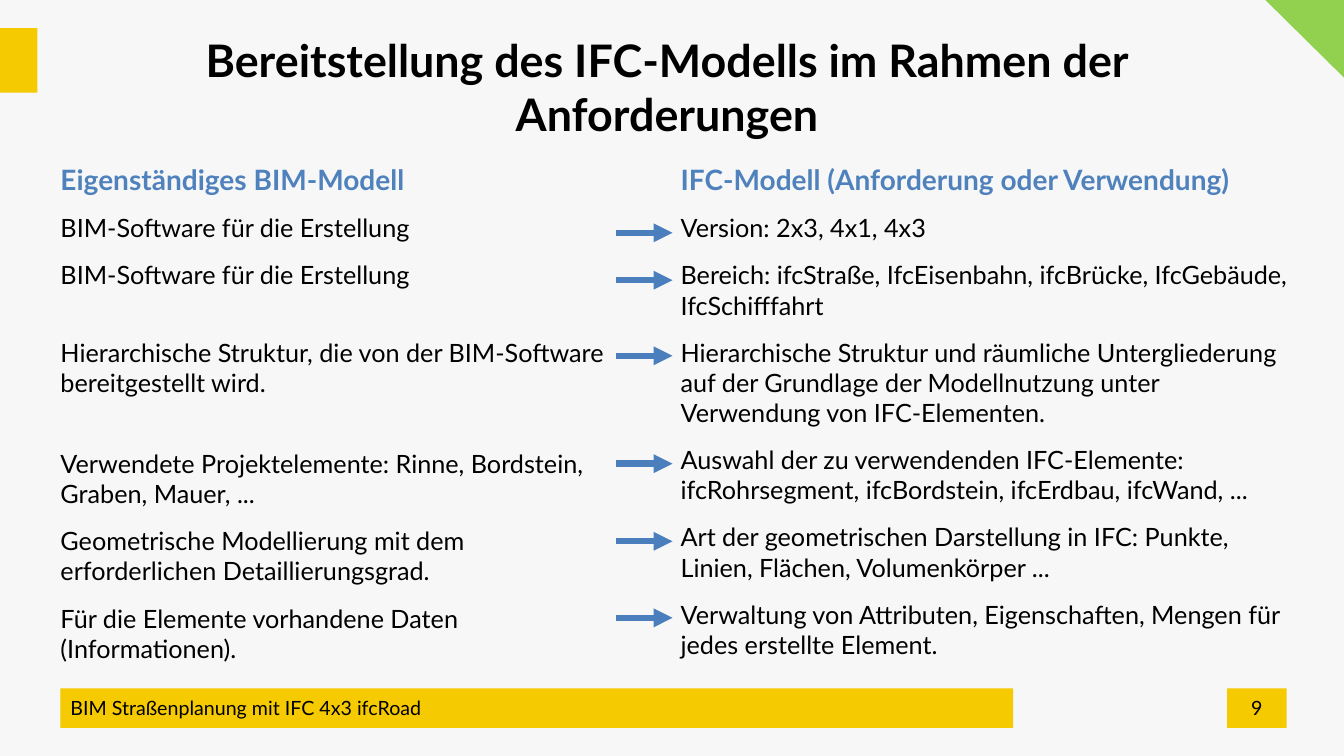
from lxml import etree
from pptx import Presentation
from pptx.dml.color import RGBColor
from pptx.enum.shapes import MSO_CONNECTOR, MSO_SHAPE
from pptx.enum.text import MSO_ANCHOR, PP_ALIGN
from pptx.oxml.ns import qn
from pptx.util import Inches, Pt

RECTANGLE, TRIANGLE = MSO_SHAPE.RECTANGLE, MSO_SHAPE.RIGHT_TRIANGLE
STRAIGHT = MSO_CONNECTOR.STRAIGHT
LEFT, CENTER = PP_ALIGN.LEFT, PP_ALIGN.CENTER
TOP, MIDDLE = MSO_ANCHOR.TOP, MSO_ANCHOR.MIDDLE

WIDTH, HEIGHT = Inches(13.33), Inches(7.5)
YELLOW, GREEN, BLUE, ARROW_BLUE = "F5CA01", "92D050", "4F81BD", "4B7EBC"
BLACK, BACKGROUND = "000000", "F7F7F7"

# Text formats
TITLE = {"size": Pt(32), "bold": True}
HEADING = {"size": Pt(20), "bold": True}
ITEM = {"size": Pt(18), "bold": False}
FOOTER = {"size": Pt(14), "bold": False}
BODY_FRAME = {"margin_left": 0, "word_wrap": True, "vertical_anchor": TOP}
FOOTER_FRAME = {"word_wrap": True, "vertical_anchor": MIDDLE}

# Places in percent of the slide: left, top, width, height
MARGIN = 4.5
TITLE_PLACE = (MARGIN, 3.73, 91, 15.73)
BIM_PLACE = (MARGIN, 20.8, 42.54, 70.13)
IFC_PLACE = (50.64, 20.8, 46.06, 70.13)
FOOTER_PLACE = (MARGIN, 91.07, 70.89, 5.2)
NUMBER_PLACE = (91.3, 91.07, 4.43, 5.2)
TAB_PLACE = (0, 3.73, 2.78, 8.53)
CORNER_PLACE = (94.15, 0, 5.85, 10.27)
ARROW_START, ARROW_END = 45.84, 50.04

# Each row: BIM text, its space before, IFC text, arrow height in percent
GAP = 12
ROWS = [
    ("BIM-Software für die Erstellung", GAP,
     "Version: 2x3, 4x1, 4x3", 30.8),
    ("BIM-Software für die Erstellung", GAP,
     "Bereich: ifcStraße, IfcEisenbahn, ifcBrücke, IfcGebäude, IfcSchifffahrt", 37.07),
    ("Hierarchische Struktur, die von der BIM-Software bereitgestellt wird.", 34,
     "Hierarchische Struktur und räumliche Untergliederung auf der Grundlage "
     "der Modellnutzung unter Verwendung von IFC-Elementen.", 47.07),
    ("Verwendete Projektelemente: Rinne, Bordstein, Graben, Mauer, ...", 36,
     "Auswahl der zu verwendenden IFC-Elemente: ifcRohrsegment, ifcBordstein, "
     "ifcErdbau, ifcWand, ...", 61.33),
    ("Geometrische Modellierung mit dem erforderlichen Detaillierungsgrad.", GAP,
     "Art der geometrischen Darstellung in IFC: Punkte, Linien, Flächen, "
     "Volumenkörper ...", 71.6),
    ("Für die Elemente vorhandene Daten (Informationen).", GAP,
     "Verwaltung von Attributen, Eigenschaften, Mengen für jedes erstellte Element.",
     81.73),
]


def color(hex_value):
    return RGBColor.from_string(hex_value)


def across(percent):
    return round(WIDTH * percent / 100)


def down(percent):
    return round(HEIGHT * percent / 100)


def box(place):
    left, top, width, height = place
    return across(left), down(top), across(width), down(height)


def apply(target, values):
    for key, value in values.items():
        setattr(target, key, value)


def write(paragraph, text, style, hex_value=BLACK, align=LEFT):
    paragraph.text = text
    paragraph.alignment = align
    apply(paragraph.font, {"name": "Lato", **style})
    paragraph.font.color.rgb = color(hex_value)


def add_block(slide, place, hex_value, kind=RECTANGLE):
    block = slide.shapes.add_shape(kind, *box(place))
    block.shadow.inherit = False
    block.fill.solid()
    block.fill.fore_color.rgb = color(hex_value)
    block.line.fill.background()
    return block


def add_footer(slide, place, text, align):
    frame = add_block(slide, place, YELLOW).text_frame
    apply(frame, FOOTER_FRAME)
    write(frame.paragraphs[0], text, FOOTER, align=align)


def add_body(slide, place):
    frame = slide.shapes.add_textbox(*box(place)).text_frame
    apply(frame, BODY_FRAME)
    return frame


def add_column(slide, place, heading, items):
    frame = add_body(slide, place)
    write(frame.paragraphs[0], heading, HEADING, BLUE)
    for text, gap in items:
        paragraph = frame.add_paragraph()
        write(paragraph, text, ITEM)
        paragraph.space_before = Pt(gap)


def add_arrow(slide, height):
    y = down(height)
    arrow = slide.shapes.add_connector(STRAIGHT, across(ARROW_START), y, across(ARROW_END), y)
    arrow.line.color.rgb = color(ARROW_BLUE)
    arrow.line.width = Pt(4.5)
    etree.SubElement(arrow.line._get_or_add_ln(), qn("a:tailEnd"), type="triangle")
    etree.SubElement(arrow._element.spPr, qn("a:effectLst"))


def main():
    deck = Presentation()
    apply(deck, {"slide_width": WIDTH, "slide_height": HEIGHT})
    slide = deck.slides.add_slide(deck.slide_layouts[6])
    slide.background.fill.solid()
    slide.background.fill.fore_color.rgb = color(BACKGROUND)

    # Frame of the slide
    add_block(slide, TAB_PLACE, YELLOW)
    add_footer(slide, FOOTER_PLACE, "BIM Straßenplanung mit IFC 4x3 ifcRoad", LEFT)
    add_footer(slide, NUMBER_PLACE, "9", CENTER)

    # Title and the two compared columns
    title = add_body(slide, TITLE_PLACE)
    write(title.paragraphs[0], "Bereitstellung des IFC-Modells im Rahmen der Anforderungen",
          TITLE, align=CENTER)
    add_column(slide, BIM_PLACE, "Eigenständiges BIM-Modell",
               [(bim, gap) for bim, gap, _, _ in ROWS])
    add_column(slide, IFC_PLACE, "IFC-Modell (Anforderung oder Verwendung)",
               [(ifc, GAP) for _, _, ifc, _ in ROWS])

    # Arrows from BIM to IFC
    for *_, height in ROWS:
        add_arrow(slide, height)

    # Green corner
    add_block(slide, CORNER_PLACE, GREEN, TRIANGLE).rotation = 180

    deck.save("out.pptx")


if __name__ == "__main__":
    main()
